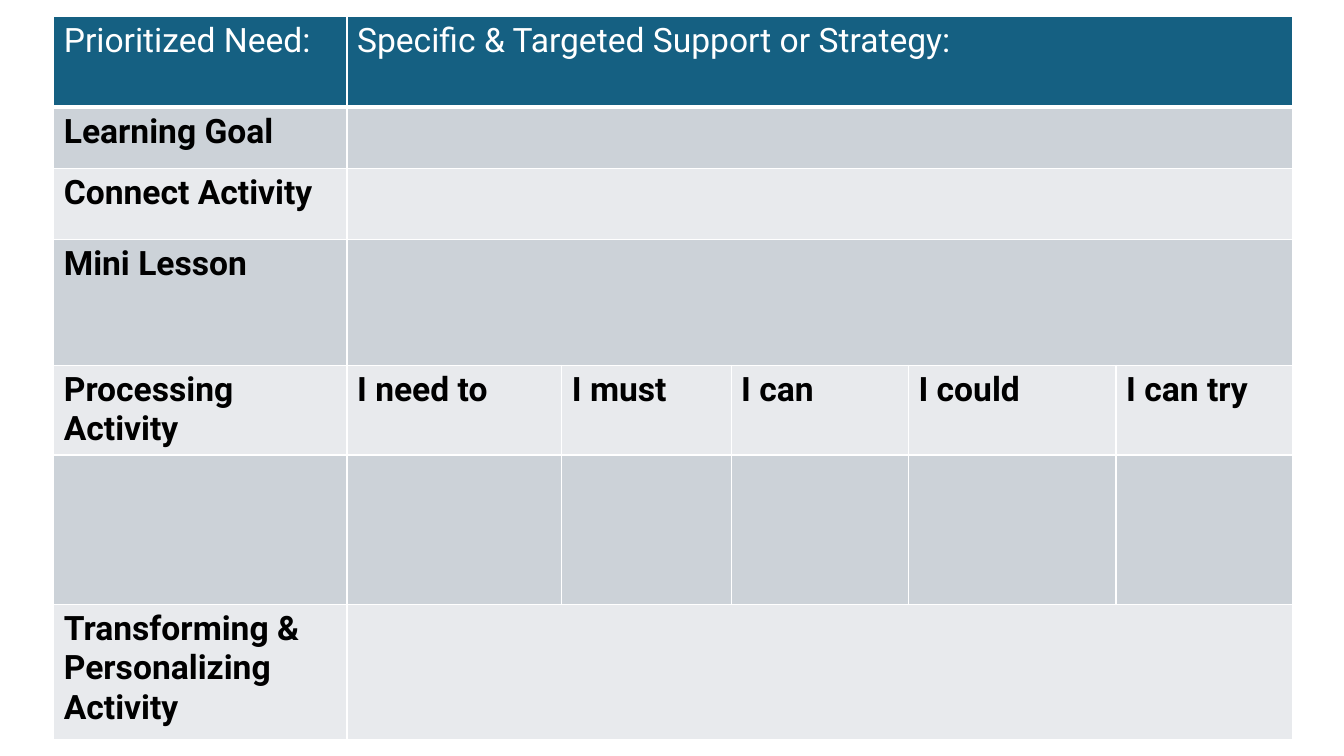
from pptx import Presentation
from pptx.dml.color import RGBColor
from pptx.oxml.ns import qn
from pptx.util import Pt
from lxml.etree import SubElement

HEADER, DARK_BAND, LIGHT_BAND = "156082", "CCD2D8", "E8EAED"
WHITE, BLACK = "FFFFFF", "000000"
COLUMN_WIDTHS = [209.5, 153.4, 121, 126.7, 148.3, 126]
ROW_HEIGHTS = [64.8, 43.9, 50.4, 90, 64.1, 106.6, 96.5]
LESSON_ROWS = [
    ["Prioritized Need:", "Specific & Targeted Support or Strategy:"],
    ["Learning Goal", ""],
    ["Connect Activity", ""],
    ["Mini Lesson", ""],
    ["Processing Activity", "I need to", "I must", "I can", "I could", "I can try"],
    [""] * len(COLUMN_WIDTHS),
    ["Transforming & Personalizing Activity", ""],
]


def color(value):
    return RGBColor.from_string(value)


def write_text(text_frame, text, font="Roboto", size=24, ink=BLACK, bold=False):
    paragraph = text_frame.paragraphs[0]
    paragraph.font.size = Pt(size)
    if text:
        run = paragraph.add_run()
        run.text = text
        run.font.name = font
        run.font.size = Pt(size)
        run.font.bold = bold
        run.font.color.rgb = color(ink)


class LessonSlide:
    def __init__(self, presentation):
        self.slide = presentation.slides.add_slide(presentation.slide_layouts[6])
        self.border_color = WHITE

    def borders(self, cell, bottom=1):
        properties = cell._tc.get_or_add_tcPr()
        for side, width in (("L", 1), ("R", 1), ("T", 1), ("B", bottom)):
            line = SubElement(properties, qn(f"a:ln{side}"), w=str(Pt(width)))
            fill = SubElement(line, qn("a:solidFill"))
            SubElement(fill, qn("a:srgbClr"), val=self.border_color)

    def cell(self, cell, text, fill, header):
        self.borders(cell, bottom=3 if header else 1)
        cell.fill.solid()
        cell.fill.fore_color.rgb = color(fill)
        write_text(cell.text_frame, text, ink=WHITE if header else BLACK, bold=not header)

    def table(self, left, top, widths, heights, rows):
        shape = self.slide.shapes.add_table(
            len(heights), len(widths), Pt(left), Pt(top), Pt(sum(widths)), Pt(sum(heights))
        )
        table = shape.table
        for column, width in zip(table.columns, widths):
            column.width = Pt(width)
        for row, height in zip(table.rows, heights):
            row.height = Pt(height)
        last = len(widths) - 1
        for index, texts in enumerate(rows):
            header = index == 0
            fill = HEADER if header else DARK_BAND if index % 2 else LIGHT_BAND
            if len(texts) == 2:
                table.cell(index, 1).merge(table.cell(index, last))
            for position in range(len(widths)):
                text = texts[position] if position < len(texts) else ""
                self.cell(table.cell(index, position), text, fill, header)


def main():
    presentation = Presentation()
    presentation.slide_width = Pt(960)
    presentation.slide_height = Pt(540)
    lesson = LessonSlide(presentation)
    lesson.table(38.4, 11.8, COLUMN_WIDTHS, ROW_HEIGHTS, LESSON_ROWS)
    presentation.save("out.pptx")


if __name__ == "__main__":
    main()
